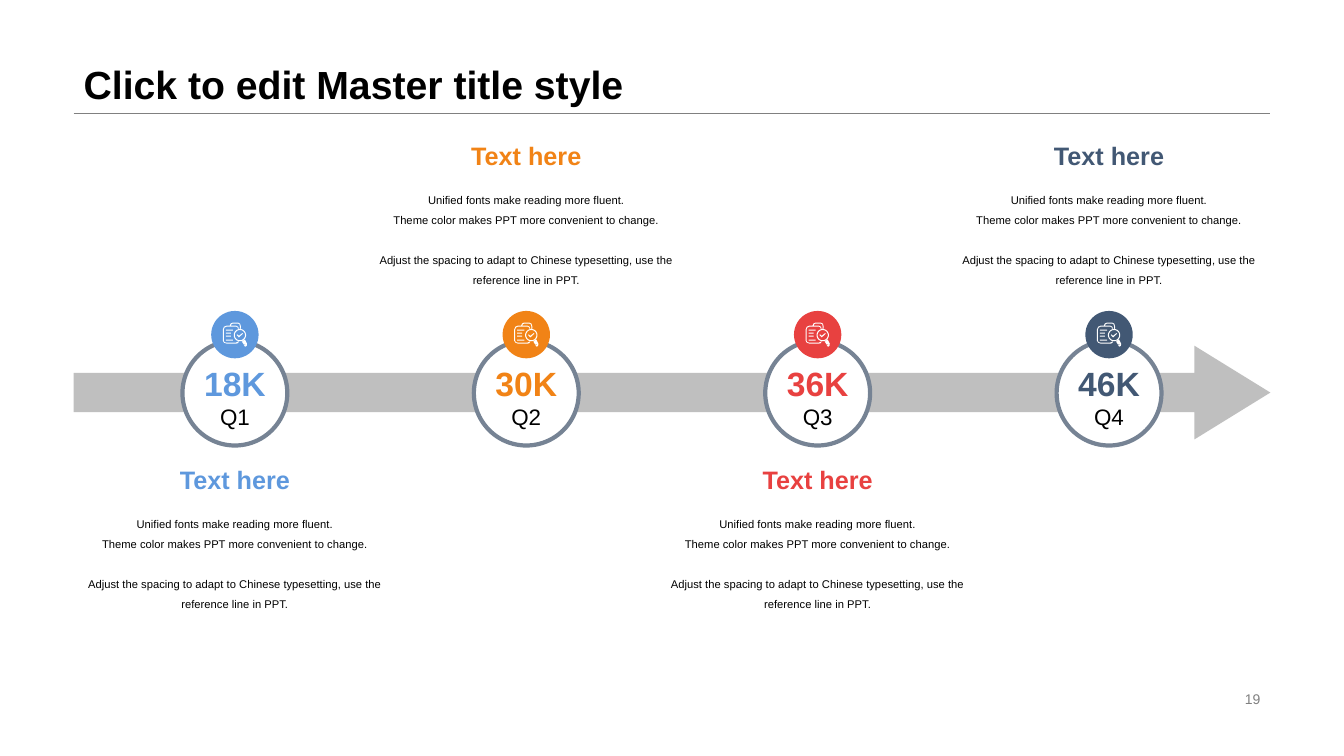
from math import cos, pi, sin

from lxml.etree import SubElement
from pptx import Presentation
from pptx.dml.color import RGBColor
from pptx.enum.shapes import MSO_CONNECTOR, MSO_SHAPE as SHAPE
from pptx.enum.text import MSO_ANCHOR as ANCHOR, MSO_AUTO_SIZE, PP_ALIGN as ALIGN
from pptx.oxml.ns import qn
from pptx.util import Inches, Pt

# Content
TITLE = "Click to edit Master title style"
PAGE_NUMBER = "19"
HEADING = "Text here"
BODY = [
    "Unified fonts make reading more fluent.",
    "Theme color makes PPT more convenient to change.",
    "Adjust the spacing to adapt to Chinese typesetting, use the reference line in PPT.",
]
BLUE = RGBColor(0x5E, 0x98, 0xDD)
ORANGE = RGBColor(0xF1, 0x83, 0x16)
RED = RGBColor(0xE8, 0x41, 0x40)
NAVY = RGBColor(0x42, 0x58, 0x74)
QUARTERS = [("18K", "Q1", BLUE), ("30K", "Q2", ORANGE), ("36K", "Q3", RED), ("46K", "Q4", NAVY)]

BLACK = RGBColor(0, 0, 0)
WHITE = RGBColor(0xFF, 0xFF, 0xFF)
GRAY = RGBColor(0x80, 0x80, 0x80)
ARROW_GRAY = RGBColor(0xBF, 0xBF, 0xBF)
RING = RGBColor(0x76, 0x83, 0x94)

# Layout, in inches
LEFT, WIDTH = 0.73, 11.87
FIRST_CENTER, STEP = 2.33, 2.89
AXIS = 3.9
TEXT_WIDTH, HEADING_HEIGHT, BODY_HEIGHT = 3.2, 0.52, 1.27
HEADING_ABOVE, HEADING_BELOW = 1.28, 4.5

# Icon outlines, in thousandths of an inch
CLIPBOARD = [
    (150, 190), (160, 190), (150, 205), (130, 210), (40, 210), (12, 200), (0, 180),
    (0, 70), (12, 42), (40, 30), (70, 30), (78, 10), (100, 0), (150, 0), (172, 12),
    (180, 40), (180, 60), (170, 60), (170, 40), (165, 18), (150, 10), (100, 10),
    (85, 18), (80, 30), (130, 30), (152, 42), (160, 60), (150, 60), (145, 46),
    (130, 40), (40, 40), (18, 50), (10, 70), (10, 180), (18, 195), (40, 200), (130, 200),
]
HANDLE = [(220, 170), (190, 190), (210, 220), (240, 210)]
TIP = [(240, 210), (210, 230), (225, 240), (238, 230)]
CHECK = [(160, 132), (144, 118), (138, 124), (160, 148), (200, 111), (194, 105)]
BARS = [(70, 70), (100, 50), (130, 50), (170, 70)]


def circle(radius, points=32):
    angles = [2 * pi * i / points for i in range(points)]
    return [(170 + radius * cos(a), 125 + radius * sin(a)) for a in angles]


def bar(top, length):
    return [(30, top), (30 + length, top), (30 + length, top + 10), (30, top + 10)]


ICON = [CLIPBOARD, circle(61), circle(51), HANDLE, TIP, CHECK] + [bar(*b) for b in BARS]


def paint(shape, fill, line=None):
    shape.shadow.inherit = False
    shape.fill.solid()
    shape.fill.fore_color.rgb = fill
    if line is None:
        shape.line.fill.background()
    else:
        shape.line.color.rgb = line
        shape.line.width = Pt(3)


def add_disc(page, center, middle, size, fill, line=None):
    disc = page.shapes.add_shape(SHAPE.OVAL, Inches(center - size / 2),
                                 Inches(middle - size / 2), Inches(size), Inches(size))
    paint(disc, fill, line)


def add_icon(page, left, top):
    builder = page.shapes.build_freeform(*ICON[0][0], scale=Inches(1) / 1000)
    for index, outline in enumerate(ICON):
        if index:
            builder.move_to(*outline[0])
        builder.add_line_segments(outline[1:], close=True)
    paint(builder.convert_to_shape(Inches(left), Inches(top)), WHITE)


def style(para, size, color, bold=False, align=ALIGN.CENTER):
    para.alignment = align
    font = para.font
    font.name, font.size, font.bold = "Arial", Pt(size), bold
    font.color.rgb = color


def add_text(page, left, top, width, height, lines, anchor=ANCHOR.MIDDLE, wrap=False):
    """Each line is (text, size, color, bold); returns the paragraphs."""
    box = page.shapes.add_textbox(Inches(left), Inches(top), Inches(width), Inches(height))
    frame = box.text_frame
    frame.word_wrap, frame.vertical_anchor = wrap, anchor
    frame.text = "\n".join(line[0] for line in lines)
    for para, (_, *look) in zip(frame.paragraphs, lines):
        style(para, *look)
    return frame.paragraphs


def add_title(page):
    title = page.shapes.title
    title.left, title.top = Inches(LEFT), Inches(0)
    title.width, title.height = Inches(WIDTH), Inches(1.12)
    frame = title.text_frame
    frame.text = TITLE
    frame.vertical_anchor, frame.auto_size = ANCHOR.BOTTOM, MSO_AUTO_SIZE.NONE
    para = frame.paragraphs[0]
    para.line_spacing = 0.9
    style(para, 28, BLACK, True, ALIGN.LEFT)

    rule = page.shapes.add_connector(MSO_CONNECTOR.STRAIGHT, Inches(LEFT), Inches(1.12),
                                     Inches(LEFT + WIDTH), Inches(1.12))
    rule.line.color.rgb, rule.line.width = GRAY, Pt(0.25)
    SubElement(rule._element.spPr, qn("a:effectLst"))


def add_quarter(page, index, value, label, color):
    center = FIRST_CENTER + index * STEP
    # Milestone and its icon
    add_disc(page, center, AXIS, 1.04, WHITE, RING)
    add_text(page, center - 0.54, 3.57, 1.08, 0.72,
             [(value, 24, color, True), (label, 16, BLACK)])
    add_disc(page, center, 3.32, 0.47, color)
    add_icon(page, center - 0.12, 3.2)

    # Description, alternating below and above the arrow
    left = center - TEXT_WIDTH / 2
    top = HEADING_ABOVE if index % 2 else HEADING_BELOW
    paras = add_text(page, left, top + HEADING_HEIGHT, TEXT_WIDTH, BODY_HEIGHT,
                     [(text, 8, BLACK) for text in BODY], ANCHOR.TOP, True)
    for para in paras:
        para.line_spacing = 1.5
    paras[-1].space_before = Pt(14)
    add_text(page, left, top, TEXT_WIDTH, HEADING_HEIGHT, [(HEADING, 18, color, True)])


def main():
    deck = Presentation()
    deck.slide_width, deck.slide_height = Inches(13.33), Inches(7.5)
    page = deck.slides.add_slide(deck.slide_layouts[5])
    add_title(page)
    add_text(page, 9.42, 6.82, 3.18, 0.23,
             [(PAGE_NUMBER, 10, GRAY, False, ALIGN.RIGHT)], wrap=True)

    # Timeline arrow
    arrow = page.shapes.add_shape(SHAPE.RIGHT_ARROW, Inches(LEFT), Inches(3.43),
                                  Inches(WIDTH), Inches(0.93))
    arrow.adjustments[0], arrow.adjustments[1] = 0.42, 0.81
    paint(arrow, ARROW_GRAY)

    for index, quarter in enumerate(QUARTERS):
        add_quarter(page, index, *quarter)
    deck.save("out.pptx")


if __name__ == "__main__":
    main()
